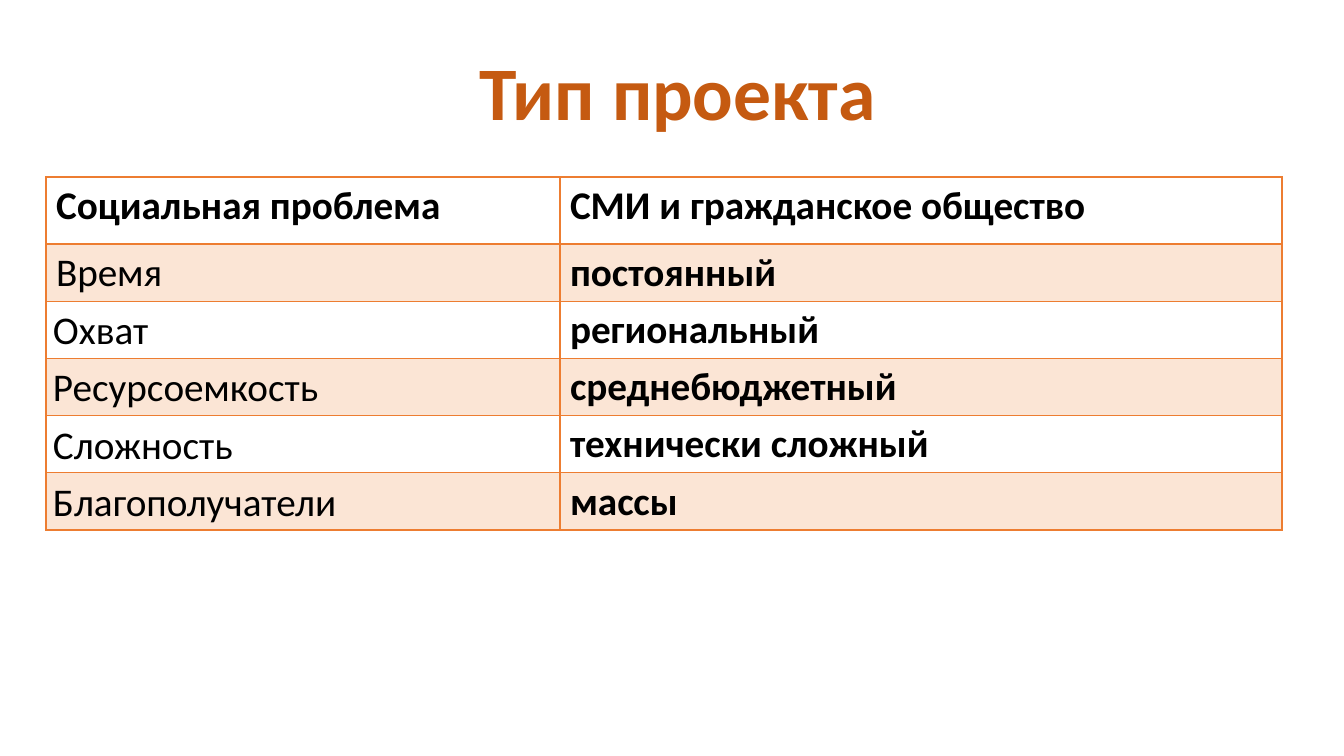
from lxml import etree
from pptx import Presentation
from pptx.dml.color import RGBColor
from pptx.enum.text import MSO_ANCHOR, MSO_AUTO_SIZE, PP_ALIGN
from pptx.oxml.ns import qn
from pptx.util import Pt

TOP, MIDDLE = MSO_ANCHOR.TOP, MSO_ANCHOR.MIDDLE
FIT_SHAPE = MSO_AUTO_SIZE.SHAPE_TO_FIT_TEXT
CENTER = PP_ALIGN.CENTER
RUST = RGBColor(0xC5, 0x5A, 0x11)
ORANGE = RGBColor(0xED, 0x7D, 0x31)
BLACK = RGBColor(0, 0, 0)
FONT = "Calibri"
EMU_PER_PX = 914400 / 100.8

ROWS = [
    ("Социальная проблема", "СМИ и гражданское общество"),
    ("Время", "постоянный"),
    ("Охват", "региональный"),
    ("Ресурсоемкость", "среднебюджетный"),
    ("Сложность", "технически сложный"),
    ("Благополучатели", "массы"),
]
COL_WIDTHS = [514, 722]
HEADER_HEIGHT, ROW_HEIGHT = 67, 57


def px(n):
    return round(n * EMU_PER_PX)


def add_border(cell, side, width):
    ln = etree.SubElement(cell._tc.get_or_add_tcPr(), qn(f"a:ln{side}"), w=str(Pt(width)))
    fill = etree.SubElement(ln, qn("a:solidFill"))
    etree.SubElement(fill, qn("a:srgbClr"), val=str(ORANGE))


prs = Presentation()
prs.slide_width, prs.slide_height = px(1344), px(756)
s = prs.slides.add_slide(prs.slide_layouts[5])

title = s.shapes.title
title.left, title.top, title.width, title.height = px(467), px(40), px(421), px(102)
tf = title.text_frame
tf.text = "Тип проекта"
tf.word_wrap = False
tf.auto_size = FIT_SHAPE
tf.vertical_anchor = TOP
p = tf.paragraphs[0]
p.alignment = CENTER
p.font.name, p.font.size, p.font.bold = FONT, Pt(54), True
p.font.color.rgb = RUST

height = HEADER_HEIGHT + ROW_HEIGHT * (len(ROWS) - 1)
table = s.shapes.add_table(len(ROWS), len(COL_WIDTHS), px(46), px(177),
                           px(sum(COL_WIDTHS)), px(height)).table
table.first_row = table.horz_banding = False
for col, width in zip(table.columns, COL_WIDTHS):
    col.width = px(width)

for i, texts in enumerate(ROWS):
    table.rows[i].height = px(ROW_HEIGHT if i else HEADER_HEIGHT)
    for j, text in enumerate(texts):
        cell = table.cell(i, j)
        cell.text = text
        p = cell.text_frame.paragraphs[0]
        if i > 1 and j == 0:
            cell.vertical_anchor = MIDDLE
            cell.margin_left = cell.margin_right = px(7)
            cell.margin_top = cell.margin_bottom = 0
            p.line_spacing = 1.07
        p.font.name, p.font.size = FONT, Pt(28)
        p.font.bold = i == 0 or j == 1
        p.font.color.rgb = BLACK
        for side in "LRTB":
            thick = (i == 0 and side == "B") or (i == 1 and side == "T")
            add_border(cell, side, 2 if thick else 1)
        if i % 2:
            cell.fill.solid()
            cell.fill.fore_color.rgb = ORANGE
            color = cell._tc.tcPr.find(qn("a:solidFill")).find(qn("a:srgbClr"))
            etree.SubElement(color, qn("a:alpha"), val="20000")
        else:
            cell.fill.background()

prs.save("out.pptx")
